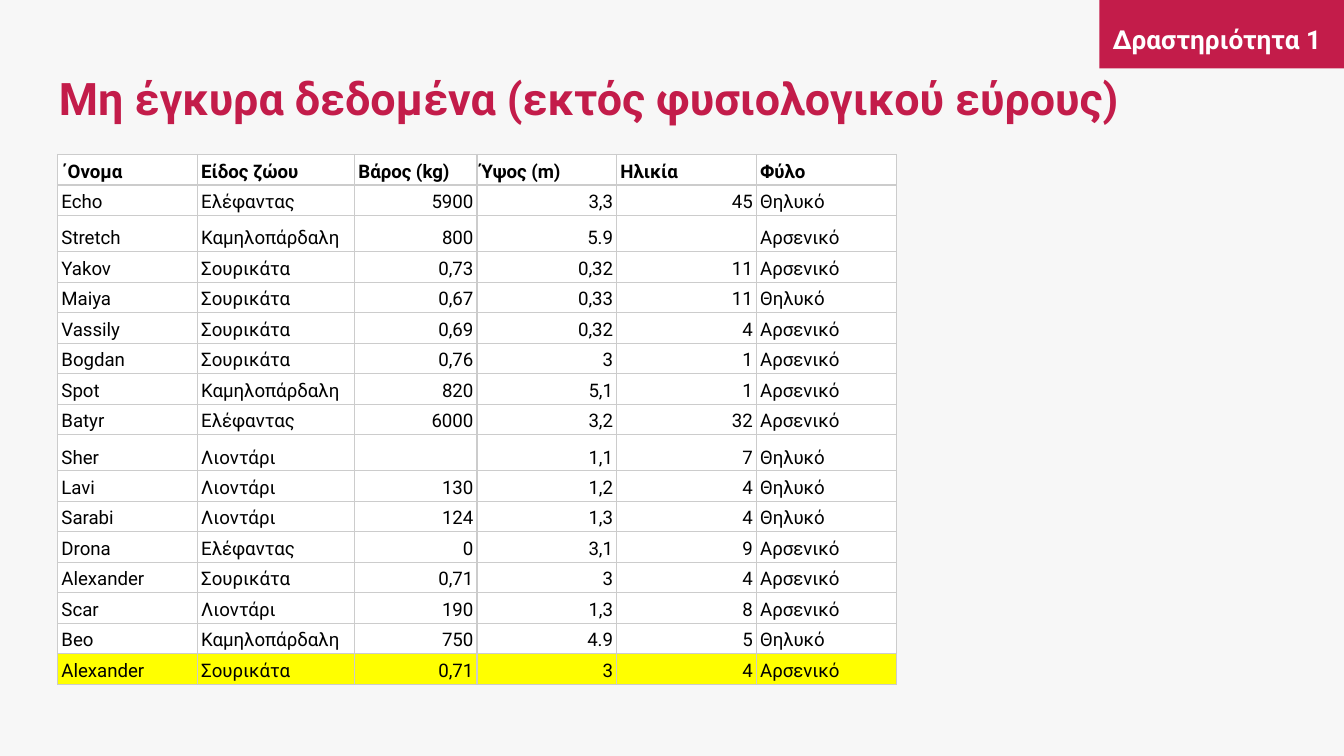
import pptx
import pptx.util
import pptx.dml.color
import pptx.enum.shapes
import pptx.enum.text
import pptx.oxml.ns
from lxml import etree

Inches, Pt = pptx.util.Inches, pptx.util.Pt
ALIGN = pptx.enum.text.PP_ALIGN
ANCHOR = pptx.enum.text.MSO_ANCHOR
qn = pptx.oxml.ns.qn

TITLE = "Μη έγκυρα δεδομένα (εκτός φυσιολογικού εύρους)"
TAG = "Δραστηριότητα 1"
HEADER = ("΄Ονομα", "Είδος ζώου", "Βάρος (kg)", "Ύψος (m)", "Ηλικία", "Φύλο")
ANIMALS = [
    ("Echo", "Ελέφαντας", "5900", "3,3", "45", "Θηλυκό"),
    ("Stretch", "Καμηλοπάρδαλη", "800", "5.9", "", "Αρσενικό"),
    ("Yakov", "Σουρικάτα", "0,73", "0,32", "11", "Αρσενικό"),
    ("Maiya", "Σουρικάτα", "0,67", "0,33", "11", "Θηλυκό"),
    ("Vassily", "Σουρικάτα", "0,69", "0,32", "4", "Αρσενικό"),
    ("Bogdan", "Σουρικάτα", "0,76", "3", "1", "Αρσενικό"),
    ("Spot", "Καμηλοπάρδαλη", "820", "5,1", "1", "Αρσενικό"),
    ("Batyr", "Ελέφαντας", "6000", "3,2", "32", "Αρσενικό"),
    ("Sher", "Λιοντάρι", "", "1,1", "7", "Θηλυκό"),
    ("Lavi", "Λιοντάρι", "130", "1,2", "4", "Θηλυκό"),
    ("Sarabi", "Λιοντάρι", "124", "1,3", "4", "Θηλυκό"),
    ("Drona", "Ελέφαντας", "0", "3,1", "9", "Αρσενικό"),
    ("Alexander", "Σουρικάτα", "0,71", "3", "4", "Αρσενικό"),
    ("Scar", "Λιοντάρι", "190", "1,3", "8", "Αρσενικό"),
    ("Beo", "Καμηλοπάρδαλη", "750", "4.9", "5", "Θηλυκό"),
    ("Alexander", "Σουρικάτα", "0,71", "3", "4", "Αρσενικό"),
]
COL_WIDTHS = (1.04, 1.17, 0.91, 1.04, 1.04, 1.04)
NUMERIC_COLS = (2, 3, 4)
ROW_H, GAP_ROW_H = 0.22, 0.27  # rows with a missing value are taller
FONT = "Roboto"
COLORS = {"background": "F7F7F7", "accent": "C31C4A", "white": "FFFFFF",
          "text": "000000", "border": "CCCCCC", "highlight": "FFFF00"}


def rgb(name):
    return pptx.dml.color.RGBColor.from_string(COLORS[name])


def paint(fill, color):
    fill.solid()
    fill.fore_color.rgb = rgb(color)


def write(tf, text, size, color, bold, align=ALIGN.LEFT, spacing=None):
    tf.text = text
    p = tf.paragraphs[0]
    p.alignment = align
    p.line_spacing = spacing
    for r in p.runs:
        r.font.name, r.font.size, r.font.bold = FONT, Pt(size), bold
        r.font.color.rgb = rgb(color)
    if not text:
        etree.SubElement(p._p, qn("a:endParaRPr"), sz=str(size * 100))


def add_text(slide, box, text, size, color, anchor, **style):
    tf = slide.shapes.add_textbox(*map(Inches, box)).text_frame
    tf.word_wrap = True
    tf.vertical_anchor = anchor
    tf.margin_left = tf.margin_right = Inches(0.1)
    tf.margin_top = tf.margin_bottom = Inches(0.1)
    write(tf, text, size, color, True, **style)


def add_borders(cell):
    tc_pr = cell._tc.get_or_add_tcPr()
    for side in ("L", "R", "T", "B"):
        ln = etree.SubElement(tc_pr, qn(f"a:ln{side}"), w=str(Pt(0.75)))
        fill = etree.SubElement(ln, qn("a:solidFill"))
        etree.SubElement(fill, qn("a:srgbClr"), val=COLORS["border"])


def add_animal_table(slide):
    rows = [HEADER] + ANIMALS
    heights = [ROW_H if all(row) else GAP_ROW_H for row in rows]
    table = slide.shapes.add_table(
        len(rows), len(HEADER), Inches(0.43), Inches(1.15),
        Inches(sum(COL_WIDTHS)), Inches(sum(heights))).table
    for column, width in zip(table.columns, COL_WIDTHS):
        column.width = Inches(width)
    for i, row in enumerate(rows):
        table.rows[i].height = Inches(heights[i])
        last = i == len(rows) - 1
        for j, value in enumerate(row):
            cell = table.cell(i, j)
            cell.margin_left = cell.margin_right = Pt(2)
            cell.margin_top = cell.margin_bottom = Pt(1.25)
            cell.vertical_anchor = ANCHOR.BOTTOM
            right = i > 0 and j in NUMERIC_COLS
            write(cell.text_frame, value, 10, "text", i == 0,
                  ALIGN.RIGHT if right else ALIGN.LEFT, 1.15)
            add_borders(cell)
            paint(cell.fill, "highlight" if last else "white")


def main():
    prs = pptx.Presentation()
    prs.slide_width = Inches(10)
    prs.slide_height = prs.slide_width * 9 // 16
    slide = prs.slides.add_slide(prs.slide_layouts[6])
    paint(slide.background.fill, "background")

    tag = slide.shapes.add_shape(
        pptx.enum.shapes.MSO_SHAPE.RECTANGLE,
        Inches(8.18), 0, Inches(1.82), Inches(0.51))
    tag.shadow.inherit = False
    paint(tag.fill, "accent")
    tag.line.fill.background()

    add_text(slide, (0.34, 0.35, 9.32, 0.76), TITLE, 24, "accent", ANCHOR.MIDDLE)
    add_text(slide, (8.17, 0.04, 1.77, 0.42), TAG, 14, "white", ANCHOR.TOP,
             align=ALIGN.CENTER, spacing=1.15)
    add_animal_table(slide)
    prs.save("out.pptx")


if __name__ == "__main__":
    main()
